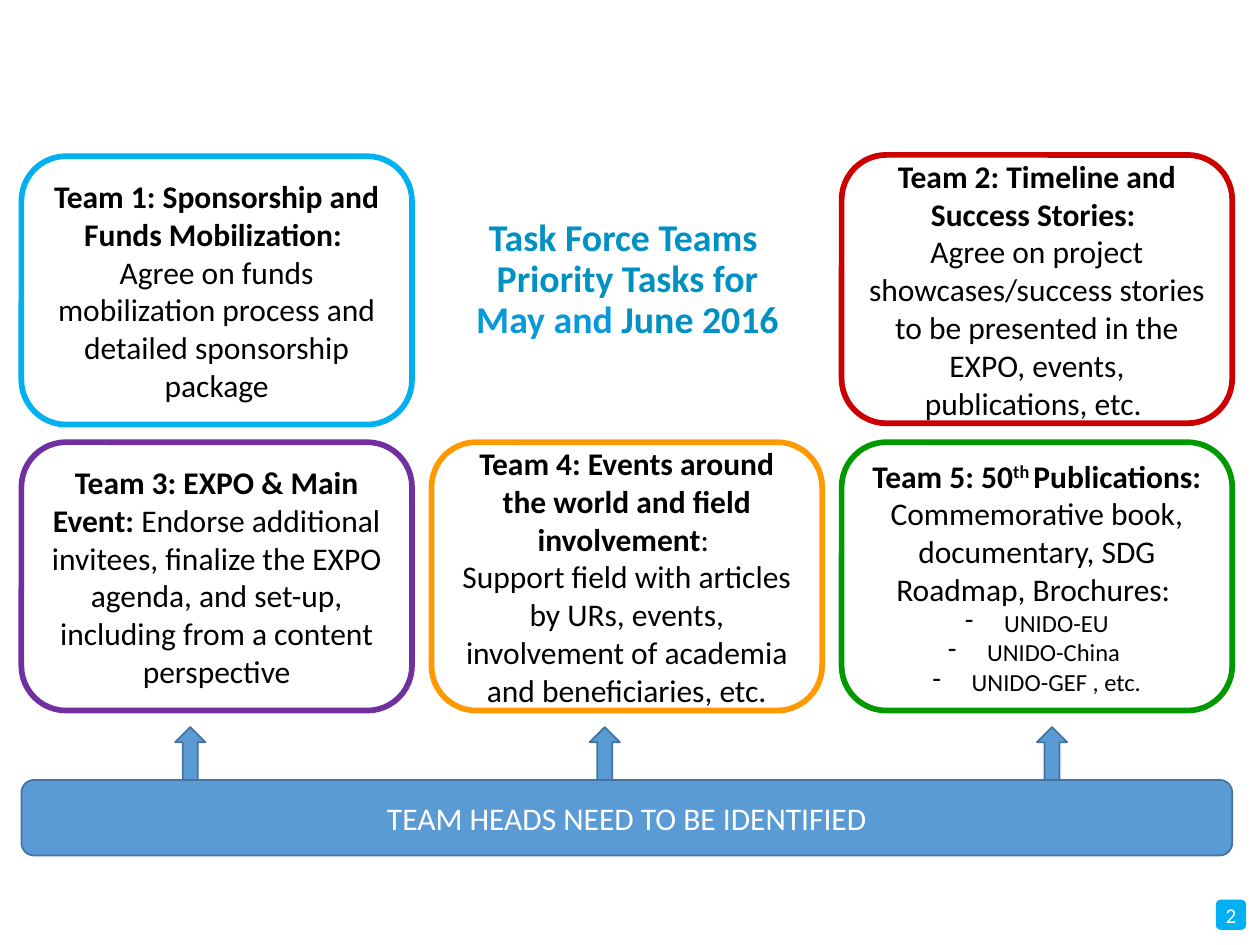
from lxml import etree
from pptx import Presentation
from pptx.dml.color import RGBColor
from pptx.enum import shapes, text
from pptx.oxml.ns import qn
from pptx.util import Inches, Pt

BLACK = RGBColor(0x00, 0x00, 0x00)
WHITE = RGBColor(0xFF, 0xFF, 0xFF)
CYAN = RGBColor(0x00, 0xB0, 0xF0)
RED = RGBColor(0xCC, 0x00, 0x00)
PURPLE = RGBColor(0x70, 0x30, 0xA0)
ORANGE = RGBColor(0xFF, 0x99, 0x00)
GREEN = RGBColor(0x00, 0x99, 0x00)
BLUE = RGBColor(0x5B, 0x9B, 0xD5)
BLUE_EDGE = RGBColor(0x43, 0x73, 0x9E)
TITLE_BLUE = RGBColor(0x00, 0x91, 0xC4)
TITLE_LIGHT = RGBColor(0x08, 0x99, 0xDA)


def add_run(p, content, size=18, color=BLACK, bold=False, baseline=None):
    r = p.add_run()
    r.text = content
    r.font.name = "Calibri"
    r.font.size = Pt(size)
    r.font.bold = bold
    r.font.color.rgb = color
    if baseline:
        r.font._element.set("baseline", str(baseline * 1000))


def add_box(kind, x, y, w, h, fill, line=None, weight=1):
    sp = s.shapes.add_shape(kind, Inches(x), Inches(y), Inches(w), Inches(h))
    sp.shadow.inherit = False
    sp.fill.solid()
    sp.fill.fore_color.rgb = fill
    if line is None:
        sp.line.fill.background()
    else:
        sp.line.color.rgb = line
        sp.line.width = Pt(weight)
    tf = sp.text_frame
    tf.word_wrap = True
    tf.vertical_anchor = text.MSO_ANCHOR.MIDDLE
    tf.paragraphs[0].alignment = text.PP_ALIGN.CENTER
    return sp


prs = Presentation()
prs.slide_width, prs.slide_height = Inches(10), Inches(7.5)
s = prs.slides.add_slide(prs.slide_layouts[6])
ROUND = shapes.MSO_SHAPE.ROUNDED_RECTANGLE

# Slide number
sp = add_box(ROUND, 9.65, 7.14, 0.24, 0.24, CYAN)
tf = sp.text_frame
tf.margin_left = tf.margin_right = tf.margin_top = tf.margin_bottom = 0
add_run(tf.paragraphs[0], "2", size=12, color=WHITE)

# Team boxes: column, top, outline, paragraphs of (text, format) runs
B = {"bold": True}
teams = [
    (0, 1.24, CYAN, [
        [("Team 1: Sponsorship and Funds Mobilization: ", B)],
        [("Agree on funds mobilization process and detailed sponsorship package", {})]]),
    (2, 1.23, RED, [
        [("Team 2: Timeline and Success Stories: ", B)],
        [("Agree on project showcases/success stories to be presented in the "
          "EXPO, events, publications, etc. ", {})]]),
    (0, 3.51, PURPLE, [
        [("Team 3: EXPO & Main Event: ", B),
         ("Endorse additional invitees, finalize the EXPO agenda, and set-up, "
          "including from a content perspective", {})]]),
    (1, 3.51, ORANGE, [
        [("Team 4: Events around the world and field involvement", B), (": ", {})],
        [("Support field with articles by URs, events, involvement of academia "
          "and beneficiaries, etc.", {})]]),
    (2, 3.51, GREEN, [
        [("Team 5: 50", B), ("th ", {"bold": True, "baseline": 30}),
         ("Publications: ", B),
         ("Commemorative book, documentary, SDG Roadmap, Brochures: ", {})]]),
]
for col, top, color, paragraphs in teams:
    sp = add_box(ROUND, 0.17 + col * 3.255, top, 3.1, 2.13, WHITE, color, 3.25)
    tf = sp.text_frame
    for i, runs in enumerate(paragraphs):
        p = tf.add_paragraph() if i else tf.paragraphs[0]
        p.alignment = text.PP_ALIGN.CENTER
        for content, fmt in runs:
            add_run(p, content, **fmt)

# Brochure list in the last team box
for brochure in ("UNIDO-EU", "UNIDO-China ", "UNIDO-GEF , etc."):
    p = tf.add_paragraph()
    p.alignment = text.PP_ALIGN.CENTER
    pPr = p._p.get_or_add_pPr()
    pPr.set("marL", str(Inches(0.31)))
    pPr.set("indent", str(-Inches(0.31)))
    etree.SubElement(pPr, qn("a:buChar")).set("char", "-")
    add_run(p, brochure, size=14)

# Title
sp = s.shapes.add_textbox(Inches(3.64), Inches(1.47), Inches(2.68), Inches(1.51))
tf = sp.text_frame
tf.word_wrap = True
tf.vertical_anchor = text.MSO_ANCHOR.MIDDLE
p = tf.paragraphs[0]
p.alignment = text.PP_ALIGN.CENTER
p.line_spacing = 0.9
title = {"size": 21.6, "bold": True}
add_run(p, "Task Force Teams ", color=TITLE_BLUE, **title)
p.add_line_break()
add_run(p, "Priority Tasks for ", color=TITLE_BLUE, **title)
add_run(p, "May and ", color=TITLE_LIGHT, **title)
add_run(p, "June 2016", color=TITLE_BLUE, **title)

# Team heads bar with arrows pointing up to the teams
sp = add_box(ROUND, 0.17, 6.19, 9.61, 0.6, BLUE, BLUE_EDGE)
add_run(sp.text_frame.paragraphs[0], "TEAM HEADS NEED TO BE IDENTIFIED", color=WHITE)
for x in (1.3, 4.59, 8.14):
    sp = add_box(shapes.MSO_SHAPE.RIGHT_ARROW, x, 5.86, 0.42, 0.24, BLUE, BLUE_EDGE)
    sp.rotation = 270

prs.save("out.pptx")
